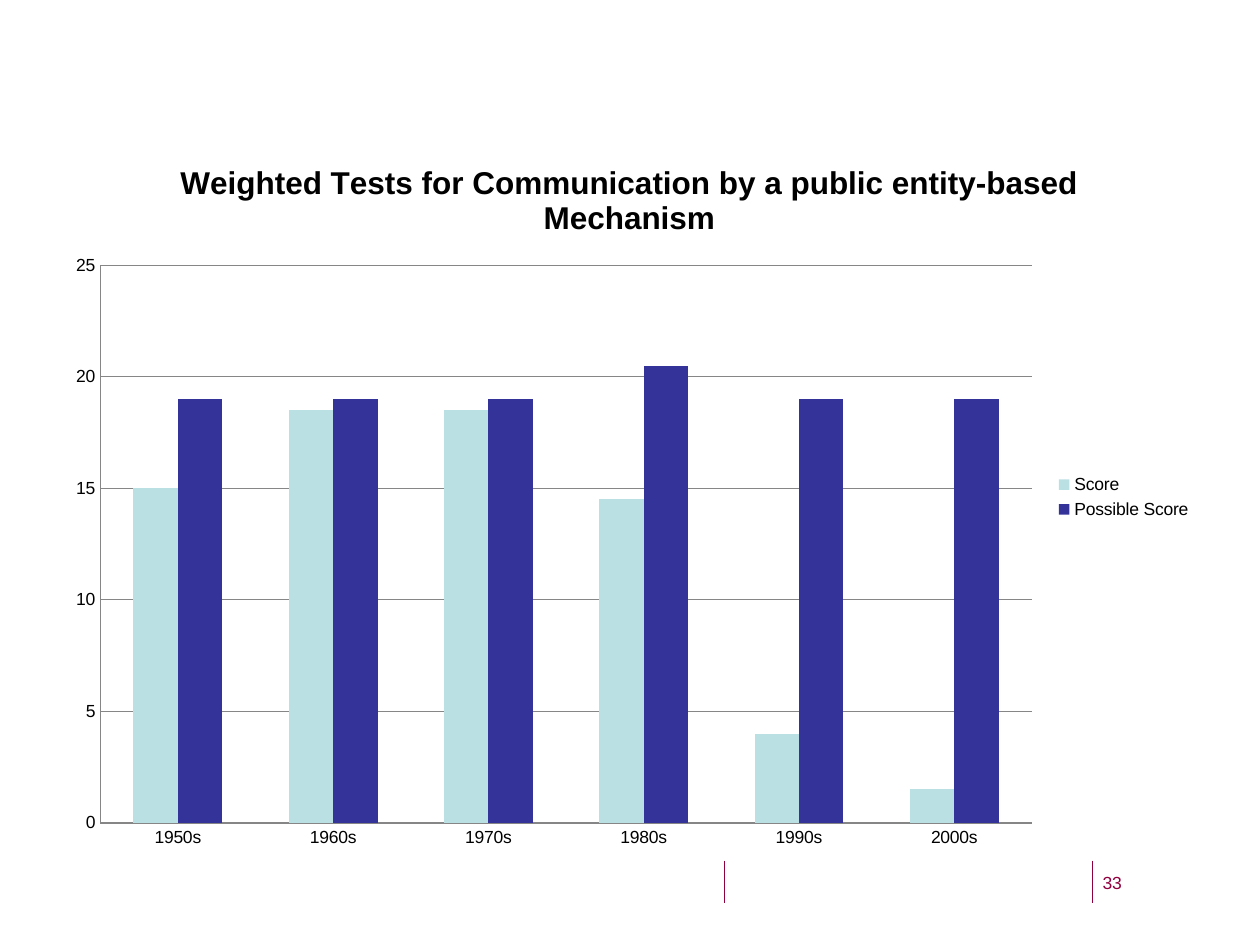
from lxml.etree import SubElement
from pptx import Presentation
from pptx.chart.data import CategoryChartData
from pptx.dml.color import RGBColor
from pptx.enum.chart import XL_CHART_TYPE, XL_LEGEND_POSITION, XL_TICK_MARK
from pptx.enum.shapes import MSO_CONNECTOR
from pptx.oxml.ns import qn
from pptx.util import Inches, Pt

WIDTH, HEIGHT = Inches(10), Inches(7.5)
COLORS = {"text": "000000", "accent": "90003E", "grid": "868686",
          "Score": "BBE0E3", "Possible Score": "333399"}
TITLE = "Weighted Tests for Communication by a public entity-based Mechanism"
DECADES = [f"{year}s" for year in range(1950, 2010, 10)]
SCORES = {"Score": (15, 18.5, 18.5, 14.5, 4, 1.5),
          "Possible Score": (19, 19, 19, 20.5, 19, 19)}
PLOT_SHARES = {"x": 0.04, "y": 0.18, "w": 0.81, "h": 0.77}


def color(name):
    return RGBColor.from_string(COLORS[name])


def format_font(font, name="text", **values):
    for key, value in {"name": "Arial", "size": Pt(10), **values}.items():
        setattr(font, key, value)
    font.color.rgb = color(name)


def format_line(line, name):
    line.color.rgb = color(name)
    line.width = Pt(0.75)


def add_divider(page, left):
    x = int(WIDTH * left)
    divider = page.shapes.add_connector(
        MSO_CONNECTOR.STRAIGHT, x, Inches(6.83), x, Inches(7.17))
    format_line(divider.line, "accent")
    SubElement(divider._element.spPr, qn("a:effectLst"))


def add_page_number(page, number):
    box = page.shapes.add_textbox(
        Inches(8.75), Inches(6.92), Inches(0.58), Inches(0.43))
    frame = box.text_frame
    frame.word_wrap = True
    for side in ("left", "top", "right", "bottom"):
        setattr(frame, f"margin_{side}", 0)
    span = frame.paragraphs[0].add_run()
    span.text = number
    format_font(span.font, "accent")


def place_plot(chart):
    area = chart._chartSpace.chart.plotArea
    for old in area.findall(qn("c:layout")):
        area.remove(old)
    layout = SubElement(area, qn("c:layout"))
    area.insert(0, layout)
    manual = SubElement(layout, qn("c:manualLayout"))
    settings = {"layoutTarget": "inner", "xMode": "edge", "yMode": "edge", **PLOT_SHARES}
    for tag, value in settings.items():
        SubElement(manual, qn(f"c:{tag}")).set("val", str(value))


def format_axes(chart):
    for axis in (chart.category_axis, chart.value_axis):
        axis.major_tick_mark = axis.minor_tick_mark = XL_TICK_MARK.NONE
        format_line(axis.format.line, "grid")
        format_font(axis.tick_labels.font)
    scale = chart.value_axis
    for key, value in {"minimum_scale": 0, "maximum_scale": 25, "major_unit": 5,
                       "has_major_gridlines": True}.items():
        setattr(scale, key, value)
    format_line(scale.major_gridlines.format.line, "grid")


def add_score_chart(page):
    data = CategoryChartData()
    data.categories = DECADES
    for name, values in SCORES.items():
        data.add_series(name, values)
    chart = page.shapes.add_chart(
        XL_CHART_TYPE.COLUMN_CLUSTERED, Inches(0.43), Inches(1.07),
        Inches(9.13), Inches(5.75), data).chart
    format_font(chart.font)
    chart.has_title = True
    para = chart.chart_title.text_frame.paragraphs[0]
    span = para.add_run()
    span.text = TITLE
    format_font(span.font, size=Pt(18), bold=True)
    chart.chart_title.include_in_layout = False
    chart.has_legend = True
    chart.legend.position = XL_LEGEND_POSITION.RIGHT
    chart.legend.include_in_layout = False
    format_font(chart.legend.font)
    format_axes(chart)
    plot = chart.plots[0]
    plot.gap_width, plot.overlap, plot.vary_by_categories = 150, 0, False
    for series in plot.series:
        series.format.fill.solid()
        series.format.fill.fore_color.rgb = color(series.name)
    place_plot(chart)


def main():
    deck = Presentation()
    deck.slide_width, deck.slide_height = WIDTH, HEIGHT
    page = deck.slides.add_slide(deck.slide_layouts[6])
    for left in (0.867, 0.575):
        add_divider(page, left)
    add_page_number(page, "33")
    add_score_chart(page)
    deck.save("out.pptx")


if __name__ == "__main__":
    main()
